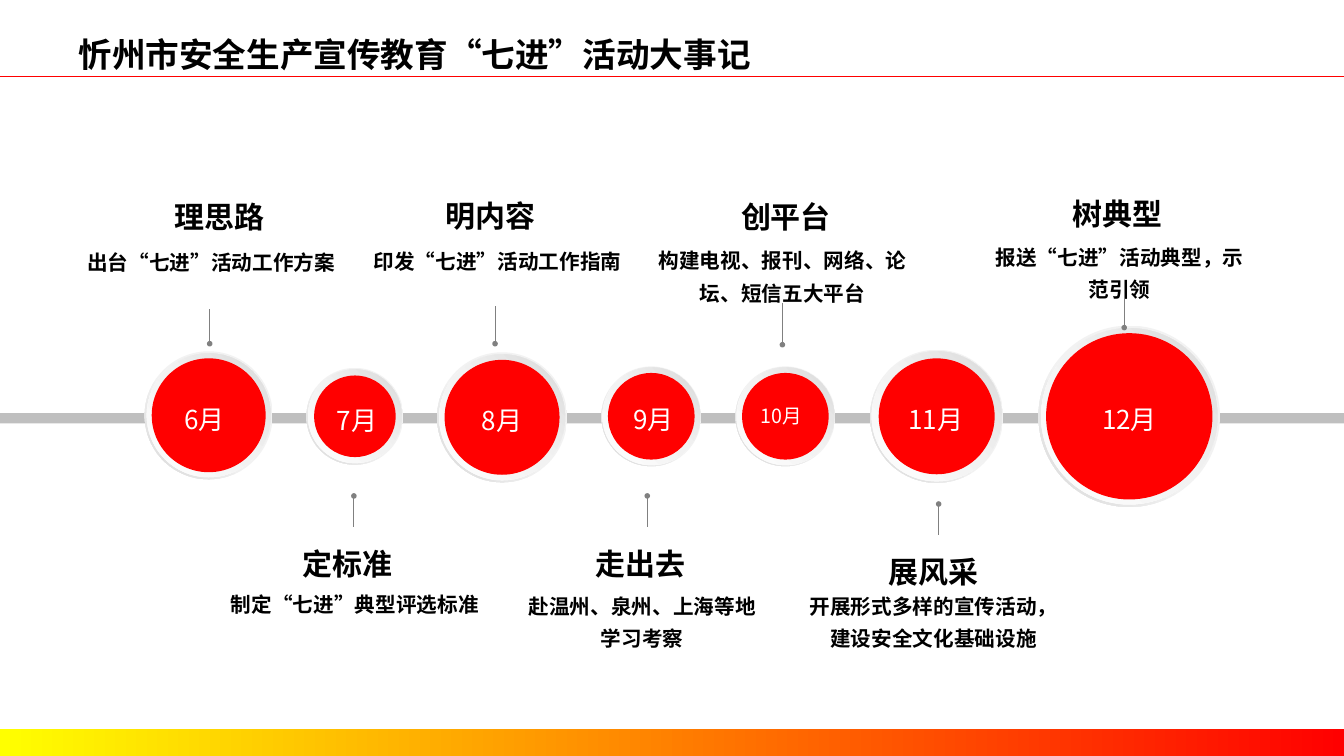
from lxml.etree import SubElement
from pptx import Presentation
from pptx.dml.color import RGBColor
from pptx.enum.lang import MSO_LANGUAGE_ID
from pptx.enum.shapes import MSO_CONNECTOR, MSO_SHAPE
from pptx.enum.text import MSO_AUTO_SIZE, PP_ALIGN
from pptx.oxml.ns import qn
from pptx.util import Inches, Pt

FONT = "Noto Sans CJK SC"
COLORS = {
    "black": "000000", "white": "FFFFFF", "red": "FF0000", "yellow": "FFFF00",
    "bar": "BFBFBF", "stem": "808080", "light": "F2F2F2", "shade": "D9D9D9",
}

# Gradients: stops (percent, colour) and clockwise angle
RIM = ([(0, "light"), (55, "light"), (100, "shade")], 135)
GLOSS = ([(0, "white"), (51, "light"), (100, "shade")], 315)
FOOTER = ([(0, "yellow"), (100, "red")], 0)

# Text styles: font values, paragraph values, margins (left, right, vertical), wrap
TITLE = {"font": {"size": Pt(24), "bold": True}, "color": "black",
         "para": {}, "margins": (0.1, 0.1, 0.05), "wrap": True}
HEADING = {"font": {"size": Pt(21.4), "bold": True}, "color": "black",
           "para": {"alignment": PP_ALIGN.CENTER, "line_spacing": 1.5},
           "margins": (0.18, 0.18, 0), "wrap": True}
DETAIL = {"font": {"size": Pt(14.7), "bold": True}, "color": "black",
          "para": {"alignment": PP_ALIGN.CENTER, "line_spacing": 1.3},
          "margins": (0.18, 0.18, 0.09), "wrap": True}
MONTH = {"font": {"size": Pt(18.6)}, "color": "white",
         "para": {"alignment": PP_ALIGN.LEFT}, "margins": (0.27, 0, 0.13), "wrap": True}
SMALL_MONTH = {**MONTH, "font": {"size": Pt(14)}}

# Month, centre, diameters of rim, gloss and disc, label box, label style
MONTHS = [
    ("6月", (2.07, 4.12), (1.27, 1.23, 1.13), (1.56, 3.87, 1, 0.6), MONTH),
    ("7月", (3.52, 4.13), (0.96, 0.93, 0.81), (3.07, 3.88, 1, 0.6), MONTH),
    ("8月", (4.98, 4.14), (1.29, 1.25, 1.14), (4.51, 3.88, 1, 0.6), MONTH),
    ("9月", (6.46, 4.13), (0.99, 0.97, 0.86), (6.01, 3.87, 1, 0.6), MONTH),
    ("10月", (7.79, 4.13), (0.99, 0.97, 0.86), (7.27, 3.89, 1.17, 0.52), SMALL_MONTH),
    ("11月", (9.29, 4.13), (1.32, 1.29, 1.15), (8.74, 3.87, 1.2, 0.6), MONTH),
    ("12月", (11.2, 4.13), (1.8, 1.75, 1.65), (10.66, 3.87, 1.18, 0.6), MONTH),
]

# Heading and its box, detail and its box, stem (x, dot y, end y)
EVENTS = [
    ("理思路", (0.76, 1.79, 2.83, 0.54),
     "出台“七进”活动工作方案", (0.68, 2.32, 2.83, 0.5), (2.08, 3.41, 3.07)),
    ("明内容", (3.87, 1.78, 1.99, 0.48),
     "印发“七进”活动工作指南", (3.52, 2.31, 2.83, 0.48), (4.91, 3.41, 3.04)),
    ("创平台", (6.76, 1.79, 2.07, 0.48),
     "构建电视、报刊、网络、论坛、短信五大平台", (6.34, 2.3, 2.84, 0.82), (7.76, 3.42, 3.01)),
    ("树典型", (10.11, 1.76, 1.95, 0.48),
     "报送“七进”活动典型，示范引领", (9.69, 2.27, 2.83, 0.82), (11.15, 3.25, 2.79)),
    ("定标准", (2.42, 5.23, 2.05, 0.48),
     "制定“七进”典型评选标准", (2.11, 5.71, 2.82, 0.48), (3.51, 4.92, 5.23)),
    ("走出去", (5.33, 5.23, 2.05, 0.48),
     "赴温州、泉州、上海等地学习考察", (5.02, 5.73, 2.7, 0.82), (6.42, 4.92, 5.23)),
    ("展风采", (8.23, 5.31, 2.05, 0.48),
     "开展形式多样的宣传活动，建设安全文化基础设施", (7.76, 5.73, 3, 0.82), (9.31, 5, 5.31)),
]


def rgb(name):
    return RGBColor.from_string(COLORS[name])


def add_shape(shapes, kind, box, fill):
    """Add a borderless shape; fill is a colour name or a gradient."""
    sp = shapes.add_shape(kind, *map(Inches, box))
    sp.shadow.inherit = False
    sp.line.fill.background()
    if isinstance(fill, str):
        sp.fill.solid()
        sp.fill.fore_color.rgb = rgb(fill)
        return sp
    stops, angle = fill
    sp.fill.gradient()
    sp.fill.gradient_angle = (360 - angle) % 360
    gs_list = sp._element.spPr.find(".//" + qn("a:gsLst"))
    gs_list.clear()
    for percent, color in stops:
        gs = SubElement(gs_list, qn("a:gs"), pos=str(percent * 1000))
        SubElement(gs, qn("a:srgbClr"), val=COLORS[color])
    return sp


def add_text(shapes, box, text, style):
    tf = shapes.add_textbox(*map(Inches, box)).text_frame
    tf.word_wrap = style["wrap"]
    tf.auto_size = MSO_AUTO_SIZE.SHAPE_TO_FIT_TEXT
    tf.margin_left, tf.margin_right, edge = map(Inches, style["margins"])
    tf.margin_top = tf.margin_bottom = edge
    p = tf.paragraphs[0]
    for name, value in style["para"].items():
        setattr(p, name, value)
    r = p.add_run()
    r.text = text
    for name, value in style["font"].items():
        setattr(r.font, name, value)
    r.font.color.rgb = rgb(style["color"])
    r.font.name = FONT
    r.font.language_id = MSO_LANGUAGE_ID.SIMPLIFIED_CHINESE
    SubElement(r.font._element, qn("a:ea"), typeface=FONT)


def add_line(shapes, start, end, color, dot=False):
    line = shapes.add_connector(MSO_CONNECTOR.STRAIGHT, *map(Inches, (*start, *end)))
    line.line.color.rgb = rgb(color)
    line.line.width = Pt(0.75)
    if dot:
        SubElement(line.line._get_or_add_ln(), qn("a:headEnd"), type="oval", w="sm", len="sm")
    SubElement(line._element.spPr, qn("a:effectLst"))


def add_month(shapes, label, center, diameters, label_box, style):
    group = shapes.add_group_shape().shapes
    cx, cy = center
    kinds = (MSO_SHAPE.DONUT, MSO_SHAPE.OVAL, MSO_SHAPE.OVAL)
    for kind, d, fill in zip(kinds, diameters, (RIM, GLOSS, "red")):
        sp = add_shape(group, kind, (cx - d / 2, cy - d / 2, d, d), fill)
        if kind == MSO_SHAPE.DONUT:
            sp.adjustments[0] = 0.05
    add_text(group, label_box, label, style)


def add_event(shapes, heading, heading_box, detail, detail_box, stem):
    group = shapes.add_group_shape().shapes
    x, dot_y, end_y = stem
    add_text(group, detail_box, detail, DETAIL)
    add_line(group, (x, dot_y), (x, end_y), "stem", dot=True)
    add_text(group, heading_box, heading, HEADING)


def main():
    prs = Presentation()
    prs.slide_width, prs.slide_height = Inches(13.33), Inches(7.5)
    shapes = prs.slides.add_slide(prs.slide_layouts[6]).shapes
    add_text(shapes, (0.68, 0.29, 7.8, 0.5), "忻州市安全生产宣传教育“七进”活动大事记", TITLE)
    add_shape(shapes, MSO_SHAPE.RECTANGLE, (0, 4.1, 13.33, 0.1), "bar")
    for month in MONTHS:
        add_month(shapes, *month)
    for event in EVENTS:
        add_event(shapes, *event)
    add_shape(shapes, MSO_SHAPE.RECTANGLE, (0, 7.23, 13.33, 0.27), FOOTER)
    add_line(shapes, (0, 0.76), (13.33, 0.76), "red")
    prs.save("out.pptx")


if __name__ == "__main__":
    main()
